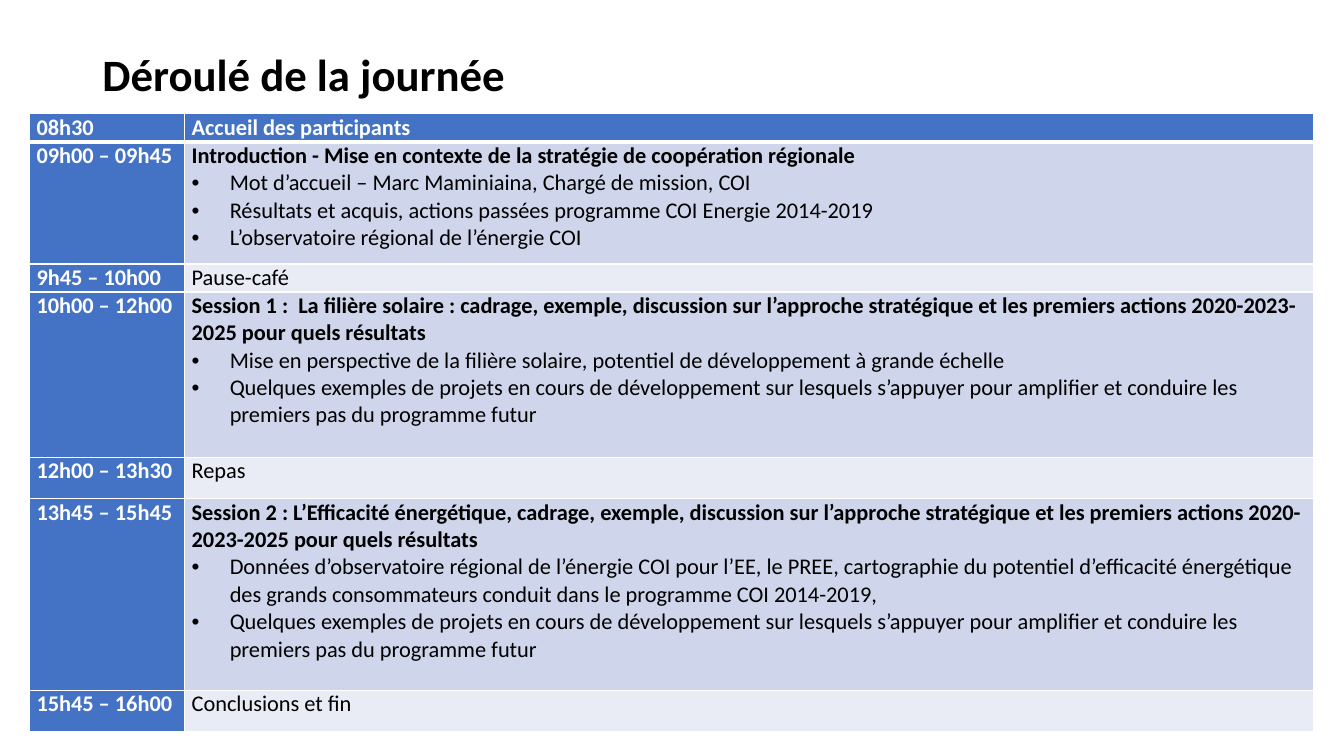
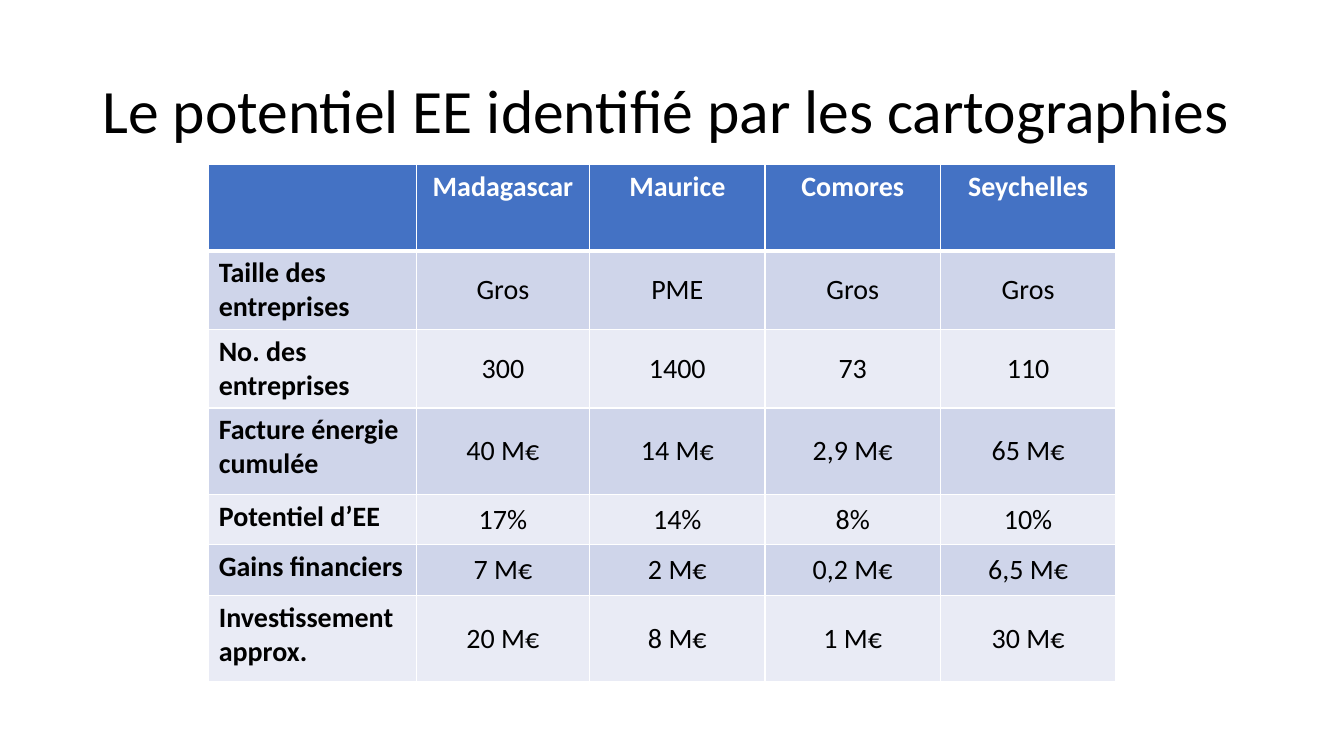
from lxml import etree
from pptx import Presentation
from pptx.dml.color import RGBColor
from pptx.enum import text
from pptx.oxml import ns
from pptx.util import Cm, Pt

FONT = "Calibri"
BLUE, BAND_DARK, BAND_LIGHT = "4472C4", "CFD5EA", "E9EBF5"
WHITE, BLACK = "FFFFFF", "000000"

AGENDA = [
    ("08h30", "Accueil des participants", []),
    ("09h00 – 09h45", "Introduction - Mise en contexte de la stratégie de coopération régionale", [
        "Mot d’accueil – Marc Maminiaina, Chargé de mission, COI",
        "Résultats et acquis, actions passées programme COI Energie 2014-2019",
        "L’observatoire régional de l’énergie COI",
    ]),
    ("9h45 – 10h00", "Pause-café", []),
    ("10h00 – 12h00",
     "Session 1 :  La filière solaire : cadrage, exemple, discussion sur l’approche "
     "stratégique et les premiers actions 2020-2023-2025 pour quels résultats", [
         "Mise en perspective de la filière solaire, potentiel de développement à grande échelle",
         "Quelques exemples de projets en cours de développement sur lesquels s’appuyer pour "
         "amplifier et conduire les premiers pas du programme futur",
     ]),
    ("12h00 – 13h30", "Repas", []),
    ("13h45 – 15h45",
     "Session 2 : L’Efficacité énergétique, cadrage, exemple, discussion sur l’approche "
     "stratégique et les premiers actions 2020-2023-2025 pour quels résultats", [
         "Données d’observatoire régional de l’énergie COI pour l’EE, le PREE, cartographie du "
         "potentiel d’efficacité énergétique des grands consommateurs conduit dans le programme "
         "COI 2014-2019,",
         "Quelques exemples de projets en cours de développement sur lesquels s’appuyer pour "
         "amplifier et conduire les premiers pas du programme futur",
     ]),
    ("15h45 – 16h00", "Conclusions et fin", []),
]

POTENTIAL = [
    ("", "Madagascar", "Maurice", "Comores", "Seychelles"),
    ("Taille des entreprises", "Gros", "PME", "Gros", "Gros"),
    ("No. des entreprises", "300", "1400", "73", "110"),
    ("Facture énergie cumulée", "40 M€", "14 M€", "2,9 M€", "65 M€"),
    ("Potentiel d’EE", "17%", "14%", "8%", "10%"),
    ("Gains financiers", "7 M€", "2 M€", "0,2 M€", "6,5 M€"),
    ("Investissement approx.", "20 M€", "8 M€", "1 M€", "30 M€"),
]


def rgb(hex_code):
    return RGBColor.from_string(hex_code)


def style_runs(paragraph, size, color=BLACK, bold=False):
    for run in paragraph.runs:
        run.font.name = FONT
        run.font.size = Pt(size)
        run.font.bold = bold
        run.font.color.rgb = rgb(color)


def add_title(slide, wording, height, size, bold=False):
    frame = slide.shapes.add_textbox(Cm(2.33), Cm(1.01), Cm(29.21), Cm(height)).text_frame
    frame.word_wrap = True
    frame.vertical_anchor = text.MSO_ANCHOR.MIDDLE
    frame.text = wording
    heading = frame.paragraphs[0]
    heading.line_spacing = 0.9
    style_runs(heading, size, bold=bold)


def add_bullet(paragraph):
    properties = paragraph._p.get_or_add_pPr()
    properties.set("marL", str(Cm(0.96)))
    properties.set("indent", str(-Cm(0.96)))
    etree.SubElement(properties, ns.qn("a:buFont")).set("typeface", "Arial")
    etree.SubElement(properties, ns.qn("a:buChar")).set("char", "•")


def add_borders(cell, row):
    """White lines around a cell, thicker between the header and the body."""
    widths = {"L": 1, "R": 1, "T": 3 if row == 1 else 1, "B": 3 if row == 0 else 1}
    properties = cell._tc.get_or_add_tcPr()
    for side, width in widths.items():
        line = etree.SubElement(properties, ns.qn(f"a:ln{side}"), w=str(Pt(width)))
        solid = etree.SubElement(line, ns.qn("a:solidFill"))
        etree.SubElement(solid, ns.qn("a:srgbClr"), val=WHITE)


def add_banded_table(slide, left, top, widths, heights, blue_first_column=False):
    table = slide.shapes.add_table(
        len(heights), len(widths), Cm(left), Cm(top), Cm(sum(widths)), Cm(sum(heights))
    ).table
    table.first_col = True
    for column, width in zip(table.columns, widths):
        column.width = Cm(width)
    for r, height in enumerate(heights):
        table.rows[r].height = Cm(height)
        for c, cell in enumerate(table.rows[r].cells):
            add_borders(cell, r)
            is_blue = r == 0 or (blue_first_column and c == 0)
            band = BAND_DARK if r % 2 else BAND_LIGHT
            cell.fill.solid()
            cell.fill.fore_color.rgb = rgb(BLUE if is_blue else band)
    return table


def add_agenda(slide, left, top):
    heights = [0.71, 3.07, 0.71, 4.17, 1.04, 4.83, 1.04]
    table = add_banded_table(slide, left, top, [3.91, 28.45], heights, blue_first_column=True)
    for r, (hours, topic, details) in enumerate(AGENDA):
        hours_cell, topic_cell = table.rows[r].cells
        for cell in (hours_cell, topic_cell):
            cell.margin_left = cell.margin_right = Cm(0.18)
            cell.margin_top = cell.margin_bottom = 0
        hours_cell.text_frame.text = hours
        style_runs(hours_cell.text_frame.paragraphs[0], 16, WHITE, bold=True)
        topic_cell.text_frame.text = "\n".join([topic, *details])
        heading, *items = topic_cell.text_frame.paragraphs
        style_runs(heading, 16, BLACK if r else WHITE, bold=r == 0 or bool(details))
        for item in items:
            add_bullet(item)
            style_runs(item, 16)


def add_potential(slide, left, top):
    widths = [5.23, 4.37] + [4.42] * 3
    heights = [2.18, 1.98, 1.98, 2.18, 1.27, 1.27, 2.18]
    table = add_banded_table(slide, left, top, widths, heights)
    for r, values in enumerate(POTENTIAL):
        for c, value in enumerate(values):
            cell = table.cell(r, c)
            cell.text_frame.text = value
            entry = cell.text_frame.paragraphs[0]
            if c:
                entry.alignment = text.PP_ALIGN.CENTER
                if r:
                    cell.vertical_anchor = text.MSO_ANCHOR.MIDDLE
            style_runs(entry, 20, BLACK if r else WHITE, bold=r == 0 or c == 0)


def main():
    deck = Presentation()
    deck.slide_width, deck.slide_height = Cm(33.87), Cm(19.05)
    blank = deck.slide_layouts[6]

    agenda = deck.slides.add_slide(blank)
    add_agenda(agenda, 0.74, 2.87)
    add_title(agenda, "Déroulé de la journée", 1.85, 32, bold=True)

    potential = deck.slides.add_slide(blank)
    add_title(potential, "Le potentiel EE identifié par les cartographies", 3.68, 44)
    add_potential(potential, 5.26, 4.14)

    deck.save("out.pptx")


if __name__ == "__main__":
    main()
